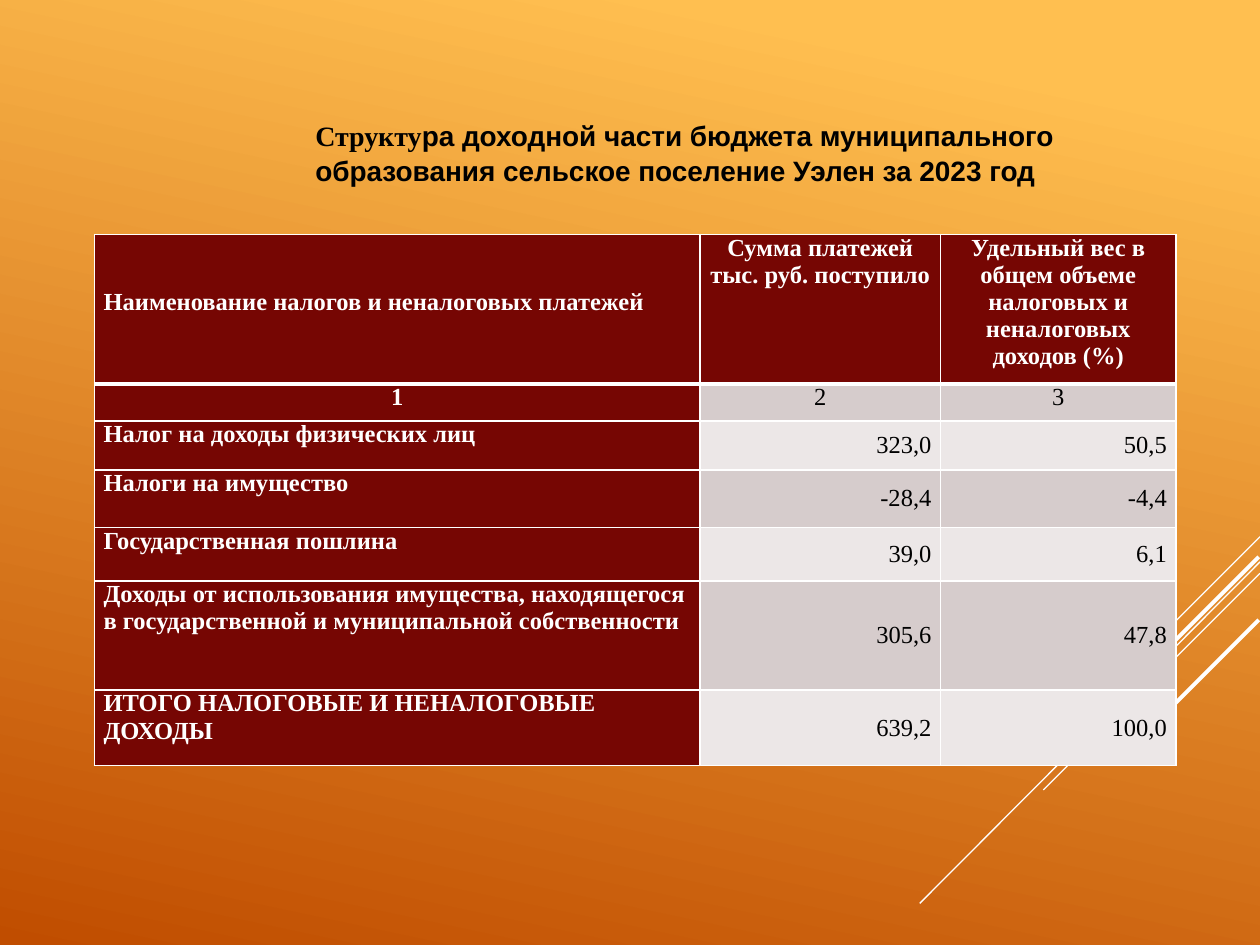
from typing import NamedTuple

from pptx import Presentation
from pptx.dml.color import RGBColor
from pptx.enum.shapes import MSO_CONNECTOR
from pptx.enum.text import MSO_ANCHOR as Anchor, MSO_AUTO_SIZE, PP_ALIGN as Align
from pptx.oxml.ns import qn
from pptx.util import Pt
from lxml.etree import SubElement

COLORS = {
    "glow": "FFBF50", "ember": "C04D00", "white": "FFFFFF", "black": "000000",
    "maroon": "760603", "band_dark": "D6CCCC", "band_light": "ECE7E7",
}
SERIF, SANS = "Times New Roman", "Arial"
EMU_PER_PT = 12700


class Ray(NamedTuple):
    x1: float
    y1: float
    x2: float
    y2: float
    width: float


class Row(NamedTuple):
    height: float
    texts: tuple[str, str, str]


RAYS = [
    Ray(720, 306.7, 660.2, 366.5, 0.75),
    Ray(720, 321.1, 525.6, 516.2, 0.75),
    Ray(720, 327.6, 596.2, 451.4, 0.75),
    Ray(719.3, 318.2, 606.2, 431.3, 2.25),
    Ray(719.3, 354.2, 637.2, 436.3, 2.25),
]
TITLE = [
    [("Структу", SERIF), ("ра доходной части бюджета муниципального", SANS)],
    [("образования сельское поселение Уэлен за 2023 год", SANS)],
]
COL_WIDTHS = [346, 137.5, 134.5]
ROWS = [
    Row(85.5, ("Наименование налогов и неналоговых платежей",
               "Сумма платежей тыс. руб. поступило",
               "Удельный вес в общем объеме налоговых и неналоговых доходов (%)")),
    Row(21, ("1", "2", "3")),
    Row(28, ("Налог на доходы физических лиц", "323,0", "50,5")),
    Row(33, ("Налоги на имущество", "-28,4", "-4,4")),
    Row(30.5, ("Государственная пошлина", "39,0", "6,1")),
    Row(62.5, ("Доходы от использования имущества, находящегося в государственной "
               "и муниципальной собственности", "305,6", "47,8")),
    Row(43, ("ИТОГО НАЛОГОВЫЕ И НЕНАЛОГОВЫЕ ДОХОДЫ", "639,2", "100,0")),
]


def rgb(name: str) -> RGBColor:
    return RGBColor.from_string(COLORS[name])


def add_run(p, text: str, font: str, size: float, color: str, bold: bool) -> None:
    r = p.add_run()
    r.text = text
    r.font.name, r.font.size, r.font.bold = font, Pt(size), bold
    r.font.color.rgb = rgb(color)


def paint_background(s) -> None:
    fill = s.background.fill
    fill.gradient()
    fill.gradient_angle = 258
    for stop, name, position in zip(fill.gradient_stops, ("glow", "ember"), (0.1, 1)):
        stop.color.rgb = rgb(name)
        stop.position = position


def add_ray(s, ray: Ray) -> None:
    line = s.shapes.add_connector(
        MSO_CONNECTOR.STRAIGHT, Pt(ray.x1), Pt(ray.y1), Pt(ray.x2), Pt(ray.y2))
    line.line.color.rgb = rgb("white")
    line.line.width = Pt(ray.width)
    SubElement(line._element.spPr, qn("a:effectLst"))


def fill_title(sp) -> None:
    sp.left, sp.top, sp.width, sp.height = Pt(173), Pt(63.5), Pt(446), Pt(67.5)
    tf = sp.text_frame
    tf.word_wrap, tf.auto_size = True, MSO_AUTO_SIZE.NONE
    tf.vertical_anchor = Anchor.MIDDLE
    tf.margin_bottom = Pt(24)
    for i, runs in enumerate(TITLE):
        p = tf.add_paragraph() if i else tf.paragraphs[0]
        p.alignment, p.line_spacing = Align.LEFT, 1.05
        for text, font in runs:
            add_run(p, text, font, 16, "black", True)


def set_borders(cell, top: float, bottom: float) -> None:
    """Draw white borders; the side borders are always 1 pt."""
    tc_pr = cell._tc.get_or_add_tcPr()
    for side, width in (("L", 1), ("R", 1), ("T", top), ("B", bottom)):
        ln = SubElement(tc_pr, qn(f"a:ln{side}"), w=str(int(width * EMU_PER_PT)))
        solid = SubElement(ln, qn("a:solidFill"))
        SubElement(solid, qn("a:srgbClr"), val=COLORS["white"])


def fill_cell(cell, row: int, col: int, text: str) -> None:
    heading = row == 0 or col == 0
    numeric = row > 1 and col > 0
    set_borders(cell, 3 if row == 1 else 1, 3 if row == 0 else 1)
    cell.fill.solid()
    band = "band_dark" if row % 2 else "band_light"
    cell.fill.fore_color.rgb = rgb("maroon" if heading else band)
    cell.margin_left = cell.margin_right = Pt(5.2)
    cell.margin_top = Pt(31 if row == col == 0 else 0)
    cell.margin_bottom = 0
    cell.vertical_anchor = Anchor.MIDDLE if numeric else Anchor.TOP
    p = cell.text_frame.paragraphs[0]
    if numeric:
        p.alignment = Align.RIGHT
    else:
        p.alignment = Align.CENTER if row == 1 or col > 0 else Align.LEFT
    add_run(p, text, SERIF, 14, "white" if heading else "black", heading)


def add_income_table(s) -> None:
    height = sum(row.height for row in ROWS)
    table = s.shapes.add_table(len(ROWS), len(COL_WIDTHS), Pt(54), Pt(134),
                               Pt(sum(COL_WIDTHS)), Pt(height)).table
    for column, width in zip(table.columns, COL_WIDTHS):
        column.width = Pt(width)
    for i, row in enumerate(ROWS):
        table.rows[i].height = Pt(row.height)
        for j, text in enumerate(row.texts):
            fill_cell(table.cell(i, j), i, j, text)


def main() -> None:
    prs = Presentation()
    prs.slide_width, prs.slide_height = Pt(720), Pt(540)
    s = prs.slides.add_slide(prs.slide_layouts.get_by_name("Title Only"))
    paint_background(s)
    for ray in RAYS:
        add_ray(s, ray)
    fill_title(s.shapes.title)
    add_income_table(s)
    prs.save("out.pptx")


if __name__ == "__main__":
    main()
